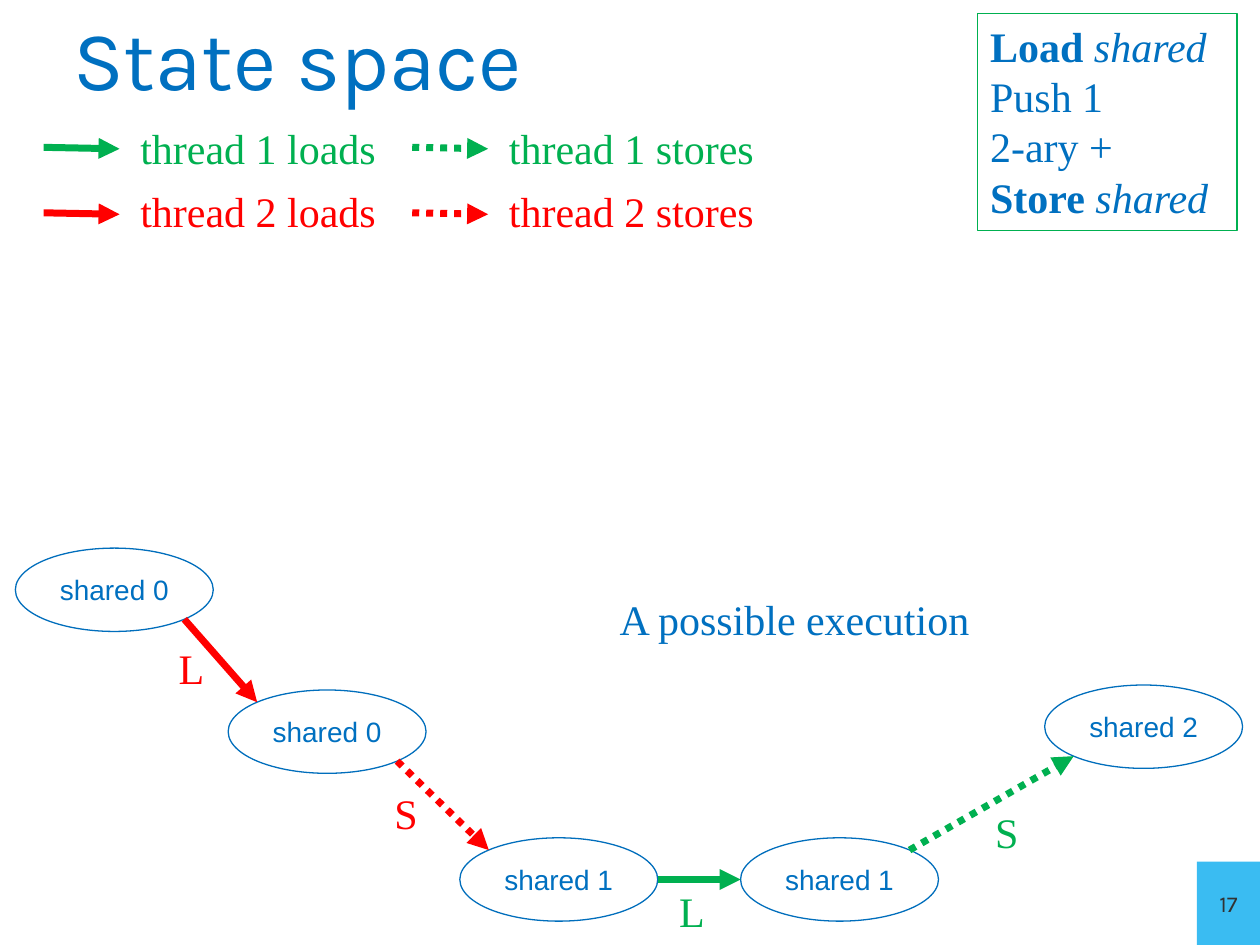
from math import sqrt
from lxml import etree
from pptx import Presentation
from pptx.dml.color import RGBColor
from pptx.enum import dml, shapes, text
from pptx.oxml.ns import qn
from pptx.util import Cm, Pt

BLUE = RGBColor(0x00, 0x70, 0xC0)
OUTLINE = RGBColor(0x00, 0x6E, 0xBC)
GREEN = RGBColor(0x00, 0xB0, 0x50)
RED = RGBColor(0xFF, 0x00, 0x00)
SKY = RGBColor(0x3A, 0xBC, 0xF2)
WHITE = RGBColor(0xFF, 0xFF, 0xFF)
DARK = RGBColor(0x32, 0x32, 0x32)
SERIF, SANS, HEADING = "Times New Roman", "Arial", "Karla"

TITLE = "State space"
PAGE = "17"
CAPTION = "A possible execution"
PROGRAM = [
    [("Load ", True, False), ("shared", False, True)],
    [("Push 1", False, False)],
    [("2-ary +", False, False)],
    [("Store ", True, False), ("shared", False, True)],
]
LEGEND = [
    [("thread 1 loads", GREEN, False), ("thread 1 stores", GREEN, True)],
    [("thread 2 loads", RED, False), ("thread 2 stores", RED, True)],
]
STATES = [
    ("shared 0", 0.31, 11.05),
    ("shared 0", 4.6, 13.91),
    ("shared 1", 9.27, 16.89),
    ("shared 1", 14.93, 16.89),
    ("shared 2", 21.06, 13.81),
]
STEPS = [
    ("L", RED, False, 3.35, 12.83),
    ("S", RED, True, 7.7, 15.75),
    ("L", GREEN, False, 13.44, 17.73),
    ("S", GREEN, True, 19.81, 16.13),
]
STATE_W, STATE_H = 3.99, 1.68
LINE_H = 1.27


def style(paragraph, size, face, color):
    paragraph.font.size = Pt(size)
    paragraph.font.name = face
    paragraph.font.color.rgb = color


def add_label(slide, words, x, y, width, color):
    frame = slide.shapes.add_textbox(Cm(x), Cm(y), Cm(width), Cm(LINE_H)).text_frame
    frame.word_wrap = True
    frame.text = words
    style(frame.paragraphs[0], 24, SERIF, color)


def add_arrow(slide, start, end, color, dotted):
    arrow = slide.shapes.add_connector(
        shapes.MSO_CONNECTOR.STRAIGHT, *(Cm(v) for v in (*start, *end)))
    arrow.line.color.rgb = color
    arrow.line.width = Pt(4)
    if dotted:
        arrow.line.dash_style = dml.MSO_LINE.ROUND_DOT
    etree.SubElement(arrow.line._get_or_add_ln(), qn("a:tailEnd"), type="triangle")
    etree.SubElement(arrow._element.spPr, qn("a:effectLst"))


def add_box(slide, kind, x, y, width, height, fill=None, line=None):
    box = slide.shapes.add_shape(kind, Cm(x), Cm(y), Cm(width), Cm(height))
    box.shadow.inherit = False
    if fill is None:
        box.fill.background()
    else:
        box.fill.solid()
        box.fill.fore_color.rgb = fill
    if line is None:
        box.line.fill.background()
    else:
        box.line.color.rgb = line
        box.line.width = Pt(0.75)
    return box.text_frame


def add_centred(frame, words, size, face, color):
    frame.text = words
    frame.word_wrap = False
    frame.vertical_anchor = text.MSO_ANCHOR.MIDDLE
    frame.paragraphs[0].alignment = text.PP_ALIGN.CENTER
    style(frame.paragraphs[0], size, face, color)


def ellipse_point(state, side, rise):
    _, x, y = state
    reach = 1 if rise == 0 else 1 / sqrt(2)
    return (x + STATE_W / 2 * (1 + side * reach),
            y + STATE_H / 2 * (1 + rise * reach))


def add_title(slide):
    title = slide.shapes.title
    title.left, title.top, title.width, title.height = Cm(1.22), Cm(-0.08), Cm(13.16), Cm(2.46)
    frame = title.text_frame
    frame.text = TITLE
    frame.vertical_anchor = text.MSO_ANCHOR.MIDDLE
    frame.paragraphs[0].alignment = text.PP_ALIGN.LEFT
    style(frame.paragraphs[0], 48, HEADING, BLUE)


def add_program(slide):
    frame = add_box(slide, shapes.MSO_SHAPE.RECTANGLE, 19.71, 0.28, 5.23, 4.37, WHITE, GREEN)
    frame.vertical_anchor = text.MSO_ANCHOR.TOP
    for number, pieces in enumerate(PROGRAM):
        paragraph = frame.add_paragraph() if number else frame.paragraphs[0]
        paragraph.alignment = text.PP_ALIGN.LEFT
        style(paragraph, 24, SERIF, BLUE)
        for words, bold, italic in pieces:
            run = paragraph.add_run()
            run.text = words
            run.font.bold = bold
            run.font.italic = italic


def add_legend(slide):
    for row, entries in enumerate(LEGEND):
        for column, (words, color, dotted) in enumerate(entries):
            x = 0.88 + 7.43 * column
            y = 2.34 + LINE_H * row
            shaft = 2.97 + 1.32 * row
            add_arrow(slide, (x, shaft), (x + 1.53, shaft + 0.03), color, dotted)
            add_label(slide, words, x + 1.7, y, 5.7, color)


def add_execution(slide):
    for words, x, y in STATES:
        frame = add_box(slide, shapes.MSO_SHAPE.OVAL, x, y, STATE_W, STATE_H, line=OUTLINE)
        add_centred(frame, words, 16, SANS, BLUE)
    for before, after, step in zip(STATES, STATES[1:], STEPS):
        words, color, dotted, x, y = step
        rise = (after[2] > before[2]) - (after[2] < before[2])
        add_arrow(slide, ellipse_point(before, 1, rise),
                  ellipse_point(after, -1, -rise), color, dotted)
        add_label(slide, words, x, y, 1.07, color)
    add_label(slide, CAPTION, 12.24, 11.84, 8, BLUE)


def main():
    deck = Presentation()
    deck.slide_width, deck.slide_height = Cm(25.4), Cm(19.05)
    slide = deck.slides.add_slide(deck.slide_layouts[5])
    add_title(slide)
    corner = add_box(slide, shapes.MSO_SHAPE.RECTANGLE, 24.13, 17.37, 1.27, 1.68, SKY)
    add_centred(corner, PAGE, 13, HEADING, DARK)
    add_program(slide)
    add_legend(slide)
    add_execution(slide)
    deck.save("out.pptx")


if __name__ == "__main__":
    main()
